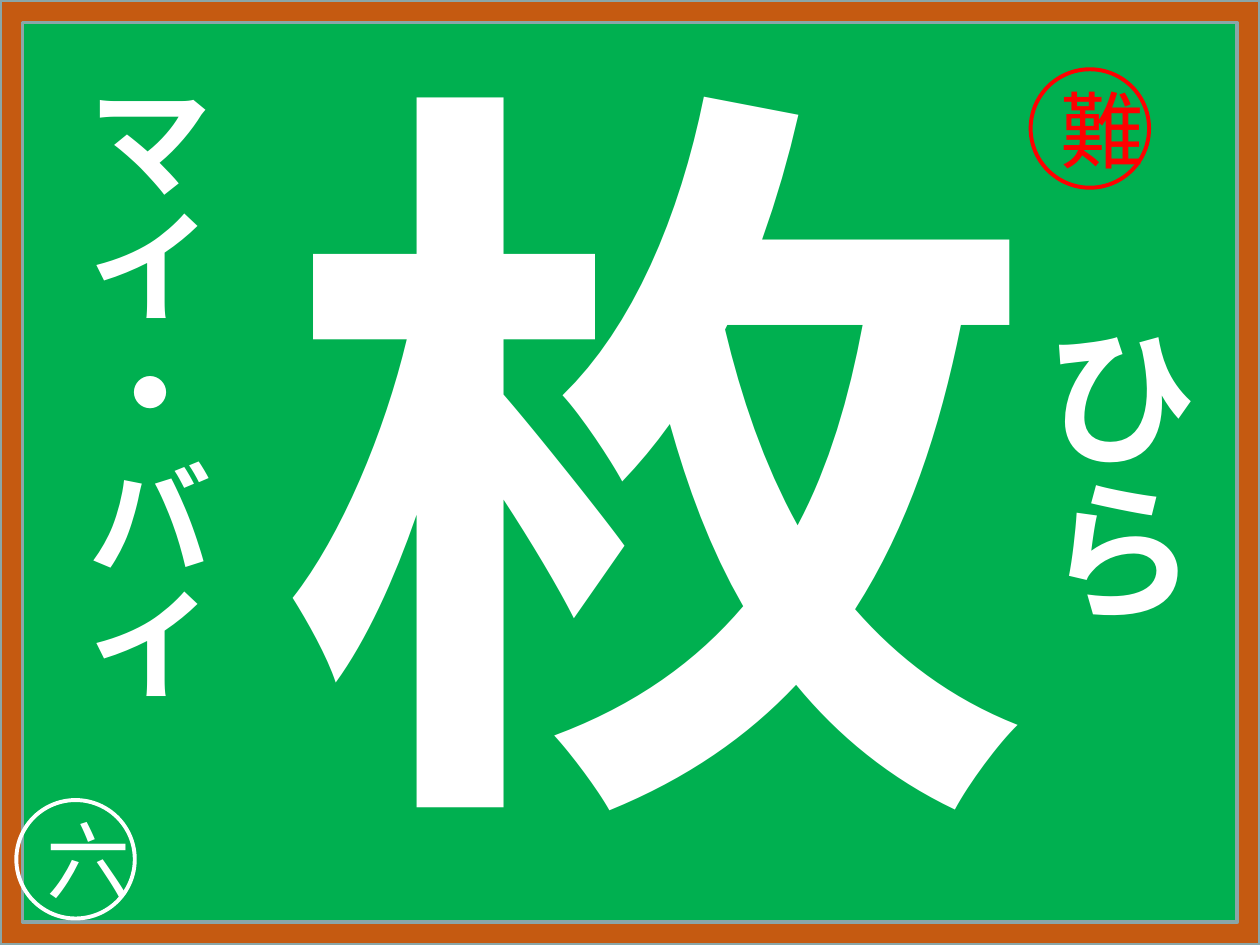
from dataclasses import dataclass

from lxml.etree import SubElement
from pptx import Presentation
from pptx.dml.color import RGBColor
from pptx.enum.shapes import MSO_SHAPE
from pptx.enum.text import MSO_ANCHOR, MSO_AUTO_SIZE, PP_ALIGN
from pptx.oxml.ns import qn
from pptx.util import Inches, Pt

WIDTH, HEIGHT = 10, 7.5
BADGE_SIZE = 0.94


@dataclass(frozen=True)
class Theme:
    font: str = "Noto Sans CJK JP"
    board: RGBColor = RGBColor(0x00, 0xB0, 0x50)
    wood: RGBColor = RGBColor(0xC5, 0x5A, 0x11)
    edge: RGBColor = RGBColor(0x8A, 0xA6, 0xA8)
    chalk: RGBColor = RGBColor(0xFF, 0xFF, 0xFF)
    red: RGBColor = RGBColor(0xFF, 0x00, 0x00)
    kanji_size: int = 432
    kun_size: int = 88
    on_size: int = 72
    badge_size: int = 48


@dataclass(frozen=True)
class Reading:
    text: str
    left: float
    top: float
    width: float
    height: float
    size: int
    wrap: bool


@dataclass(frozen=True)
class Badge:
    text: str
    left: float
    top: float
    color: RGBColor


THEME = Theme()
READINGS = [
    Reading("ひら", 7.96, 2.43, 1.68, 2.52, THEME.kun_size, False),
    Reading("マイ・バイ", 0.4, 0.52, 1.41, 6.61, THEME.on_size, True),
]
BADGES = [
    Badge("六", 0.13, 6.35, THEME.chalk),
    Badge("難", 8.18, 0.55, THEME.red),
]


def inches(*lengths: float) -> list:
    return [Inches(length) for length in lengths]


def write(box, text: str, size: int, color: RGBColor, bold: bool) -> None:
    """Put one centred paragraph in a box, with its East Asian font."""
    para = box.text_frame.paragraphs[0]
    para.text = text
    para.alignment = PP_ALIGN.CENTER
    font = para.font
    font.size, font.bold = Pt(size), bold
    font.color.rgb = color
    font.name = THEME.font
    defaults = para._p.pPr.find(qn("a:defRPr"))
    SubElement(defaults, qn("a:ea")).set("typeface", THEME.font)


def set_vertical(box) -> None:
    box.text_frame._txBody.bodyPr.set("vert", "eaVert")


def add_frame(page) -> None:
    frame = page.shapes.add_shape(MSO_SHAPE.FRAME, *inches(0, 0, WIDTH, HEIGHT))
    frame.adjustments[0] = 0.024
    frame.shadow.inherit = False
    frame.fill.solid()
    frame.fill.fore_color.rgb = THEME.wood
    frame.line.color.rgb = THEME.edge
    frame.line.width = Pt(2)


def set_kanji(page, kanji: str) -> None:
    title = page.shapes.title
    title.left, title.top, title.width, title.height = inches(1.81, 0.55, 6.38, 6.27)
    title.text_frame.auto_size = MSO_AUTO_SIZE.NONE
    title.text_frame.vertical_anchor = MSO_ANCHOR.MIDDLE
    set_vertical(title)
    write(title, kanji, THEME.kanji_size, THEME.chalk, True)


def add_reading(page, reading: Reading) -> None:
    box = page.shapes.add_textbox(
        *inches(reading.left, reading.top, reading.width, reading.height))
    box.text_frame.word_wrap = reading.wrap
    box.text_frame.auto_size = MSO_AUTO_SIZE.SHAPE_TO_FIT_TEXT
    set_vertical(box)
    write(box, reading.text, reading.size, THEME.chalk, True)


def add_badge(page, badge: Badge) -> None:
    circle = page.shapes.add_shape(
        MSO_SHAPE.OVAL, *inches(badge.left, badge.top, BADGE_SIZE, BADGE_SIZE))
    circle.shadow.inherit = False
    circle.fill.background()
    circle.line.color.rgb = badge.color
    circle.line.width = Pt(2.25)
    circle.text_frame.vertical_anchor = MSO_ANCHOR.MIDDLE
    write(circle, badge.text, THEME.badge_size, badge.color, False)


def main() -> None:
    deck = Presentation()
    deck.slide_width, deck.slide_height = inches(WIDTH, HEIGHT)
    page = deck.slides.add_slide(deck.slide_layouts.get_by_name("Title Only"))

    # Green board with a wooden frame
    page.background.fill.solid()
    page.background.fill.fore_color.rgb = THEME.board
    add_frame(page)

    # The character, its readings and its marks
    set_kanji(page, "枚")
    for reading in READINGS:
        add_reading(page, reading)
    for badge in BADGES:
        add_badge(page, badge)

    deck.save("out.pptx")


if __name__ == "__main__":
    main()
